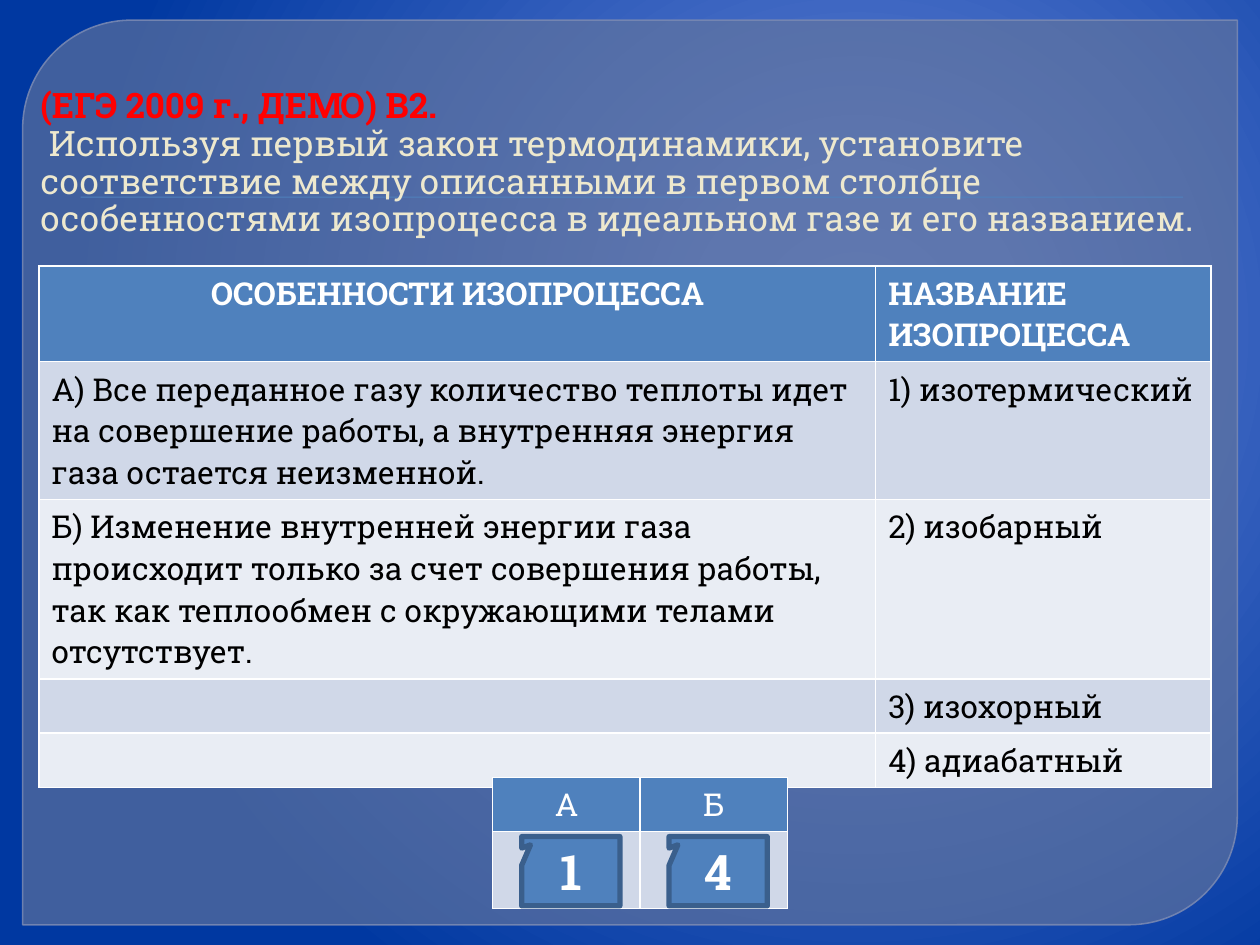
from dataclasses import dataclass

from lxml.etree import SubElement
from pptx import Presentation
from pptx.dml.color import RGBColor
from pptx.enum.shapes import MSO_SHAPE
from pptx.enum.text import MSO_ANCHOR, MSO_AUTO_SIZE, PP_ALIGN
from pptx.oxml import parse_xml
from pptx.oxml.ns import nsdecls, qn
from pptx.util import Inches, Pt

WIDTH, HEIGHT = Inches(10), Inches(7.5)
FONT = "Roboto Slab"
COLORS = {
    "glow": "6182D6", "mid": "5578CE", "deep": "0038A1",
    "panel": "63759D", "panel_edge": "7989B3",
    "accent": "4F81BD", "accent_edge": "3A5F8C",
    "band_dark": "D0D8E8", "band_light": "E9EDF4",
    "exam": "FF0000", "task": "EDE8CE", "white": "FFFFFF", "black": "000000",
}


@dataclass(frozen=True)
class Box:
    """A place on the slide, in percent of its width and height."""
    left: float
    top: float
    width: float
    height: float

    def emu(self) -> tuple[int, int, int, int]:
        return (across(self.left), down(self.top),
                across(self.width), down(self.height))


@dataclass(frozen=True)
class Grid:
    """A table; columns and rows are percent of the slide's size."""
    left: float
    top: float
    columns: tuple[float, ...]
    rows: tuple[float, ...]
    cells: tuple[tuple[str, ...], ...]
    centred_headings: int
    bold_heading: bool


PROCESSES = Grid(
    3.1, 28.13, (66.4, 26.6), (10.1, 14.6, 18.93, 5.73, 5.73),
    (
        ("ОСОБЕННОСТИ ИЗОПРОЦЕССА", "НАЗВАНИЕ ИЗОПРОЦЕССА"),
        ("А) Все переданное газу количество теплоты идет на совершение работы, "
         "а внутренняя энергия газа остается неизменной.", "1) изотермический"),
        ("Б) Изменение внутренней энергии газа происходит только за счет "
         "совершения работы, так как теплообмен с окружающими телами "
         "отсутствует.", "2) изобарный"),
        ("", "3) изохорный"),
        ("", "4) адиабатный"),
    ), 1, True)
ANSWERS = Grid(39.1, 82.27, (11.7, 11.7), (5.73, 8.13),
               (("А", "Б"), ("", "")), 2, False)
ANSWER_DIGITS = ("1", "4")


def across(percent: float) -> int:
    return round(WIDTH * percent / 100)


def down(percent: float) -> int:
    return round(HEIGHT * percent / 100)


def rgb(name: str) -> RGBColor:
    return RGBColor.from_string(COLORS[name])


def style_font(font, size: float, color: str, bold: bool = False) -> None:
    font.name, font.size, font.bold = FONT, Pt(size), bold
    font.color.rgb = rgb(color)


def set_background(slide) -> None:
    """Radial glow in the upper part of the slide."""
    slide.background.fill.gradient()
    default = slide.element.find(".//" + qn("a:gradFill"))
    stops = "".join(
        f'<a:gs pos="{share * 1000}"><a:srgbClr val="{COLORS[name]}"/></a:gs>'
        for share, name in ((0, "glow"), (20, "mid"), (100, "deep")))
    glow = parse_xml(
        f'<a:gradFill {nsdecls("a")} rotWithShape="1"><a:gsLst>{stops}</a:gsLst>'
        '<a:path path="circle"><a:fillToRect l="68000" t="35000" r="32000" '
        'b="65000"/></a:path></a:gradFill>')
    default.getparent().replace(default, glow)


def add_block(slide, kind: MSO_SHAPE, box: Box, fill: str,
              edge: str = "", edge_width: float = 0):
    block = slide.shapes.add_shape(kind, *box.emu())
    block.shadow.inherit = False
    block.fill.solid()
    block.fill.fore_color.rgb = rgb(fill)
    if edge:
        block.line.color.rgb = rgb(edge)
        block.line.width = Pt(edge_width)
    else:
        block.line.fill.background()
    return block


def add_panel(slide) -> None:
    panel = add_block(slide, MSO_SHAPE.ROUND_2_DIAG_RECTANGLE,
                      Box(1.8, 2.13, 96.4, 95.73), "panel", "panel_edge", 0.87)
    panel.adjustments[0], panel.adjustments[1] = 0.12, 0
    opacities = (65, 88)
    for color, opacity in zip(panel.element.spPr.iter(qn("a:srgbClr")), opacities):
        SubElement(color, qn("a:alpha"), val=str(opacity * 1000))


def write_title(slide) -> None:
    title = slide.shapes.title
    title.left, title.top, title.width, title.height = Box(
        1.6, 4.13, 96.9, 21.87).emu()
    slide.shapes.element.append(title.element)  # in front of the panel
    frame = title.text_frame
    frame.word_wrap, frame.auto_size = True, MSO_AUTO_SIZE.NONE
    frame.vertical_anchor = MSO_ANCHOR.BOTTOM
    paragraph = frame.paragraphs[0]
    paragraph.alignment, paragraph.line_spacing = PP_ALIGN.LEFT, 0.9
    paragraph._p.get_or_add_pPr().set("marL", str(Inches(0.06)))
    exam = paragraph.add_run()
    exam.text = "(ЕГЭ 2009 г., ДЕМО) В2. "
    style_font(exam.font, 20, "exam", True)
    paragraph.add_line_break()
    task = paragraph.add_run()
    task.text = (" Используя первый закон термодинамики, установите соответствие "
                 "между описанными в первом столбце особенностями изопроцесса "
                 "в идеальном газе и его названием.")
    style_font(task.font, 20, "task")


def add_borders(cell) -> None:
    properties = cell._tc.get_or_add_tcPr()
    for position, side in enumerate("LRTB"):
        properties.insert(position, parse_xml(
            f'<a:ln{side} {nsdecls("a")} w="{Pt(1)}"><a:solidFill>'
            f'<a:srgbClr val="{COLORS["white"]}"/></a:solidFill></a:ln{side}>'))


def add_grid(slide, grid: Grid) -> None:
    box = Box(grid.left, grid.top, sum(grid.columns), sum(grid.rows))
    table = slide.shapes.add_table(
        len(grid.rows), len(grid.columns), *box.emu()).table
    for column, width in zip(table.columns, grid.columns):
        column.width = across(width)
    for row, height in zip(table.rows, grid.rows):
        row.height = down(height)
    for r, texts in enumerate(grid.cells):
        heading = r == 0
        band = "accent" if heading else "band_dark" if r % 2 else "band_light"
        for c, text in enumerate(texts):
            cell = table.cell(r, c)
            cell.text = text
            cell.fill.solid()
            cell.fill.fore_color.rgb = rgb(band)
            add_borders(cell)
            paragraph = cell.text_frame.paragraphs[0]
            if heading and c < grid.centred_headings:
                paragraph.alignment = PP_ALIGN.CENTER
            style_font(paragraph.font, 18, "white" if heading else "black",
                       heading and grid.bold_heading)


def add_answer(slide, column: int, digit: str) -> None:
    left = 41.4 + column * ANSWERS.columns[0]
    callout = add_block(slide, MSO_SHAPE.RECTANGULAR_CALLOUT,
                        Box(left, 88.53, 7.8, 7.33), "accent", "accent_edge", 3)
    callout.adjustments[0], callout.adjustments[1] = -0.41, -0.38
    frame = callout.text_frame
    frame.text = digit
    frame.vertical_anchor = MSO_ANCHOR.MIDDLE
    paragraph = frame.paragraphs[0]
    paragraph.alignment = PP_ALIGN.CENTER
    style_font(paragraph.font, 28, "white", True)


def main() -> None:
    deck = Presentation()
    deck.slide_width, deck.slide_height = WIDTH, HEIGHT
    slide = deck.slides.add_slide(deck.slide_layouts.get_by_name("Title Only"))
    set_background(slide)
    add_panel(slide)
    add_block(slide, MSO_SHAPE.RECTANGLE, Box(6.4, 20.8, 87.5, 0.13), "accent")
    write_title(slide)
    for grid in (PROCESSES, ANSWERS):
        add_grid(slide, grid)
    for column, digit in enumerate(ANSWER_DIGITS):
        add_answer(slide, column, digit)
    deck.save("out.pptx")


if __name__ == "__main__":
    main()
